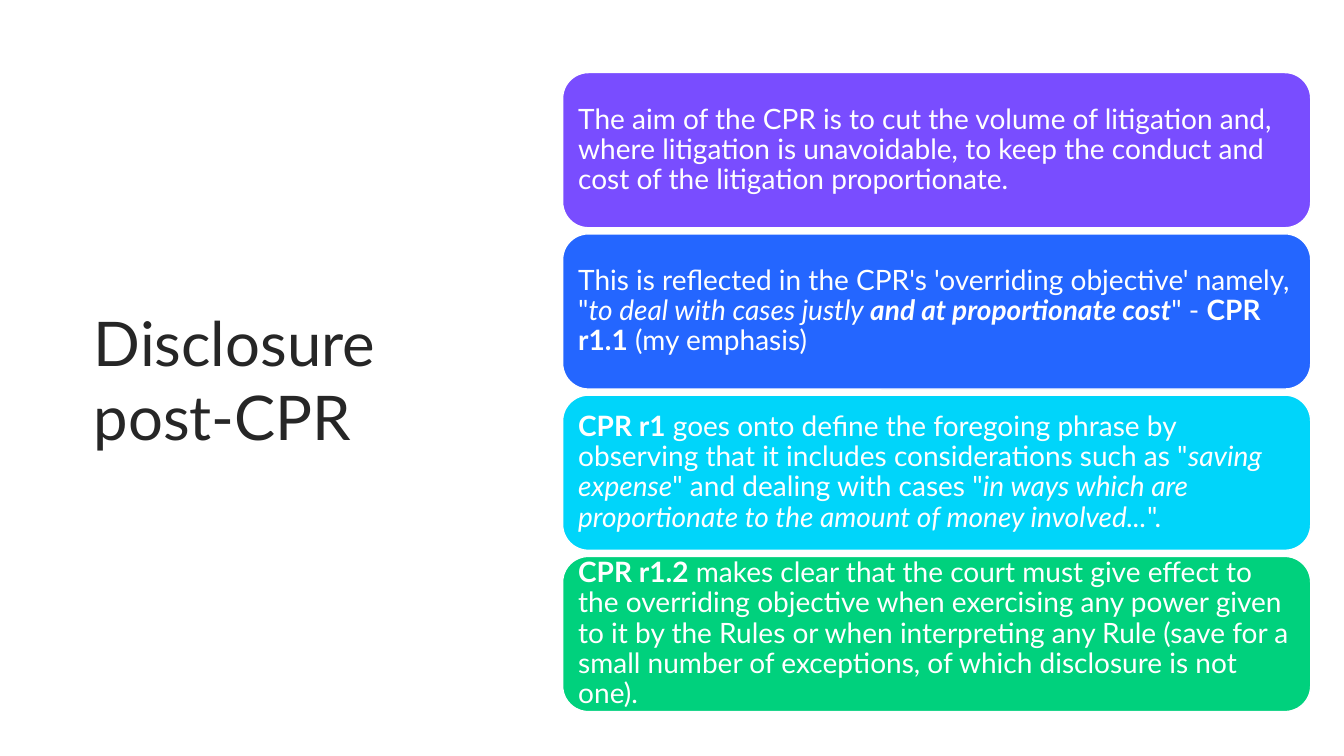
from dataclasses import dataclass

import pptx
import pptx.dml.color
import pptx.enum.shapes
import pptx.enum.text
import pptx.util

EMU_PER_PX = 9144


@dataclass(frozen=True)
class Theme:
    font: str = "Lato"
    title_size: int = 44
    card_size: int = 20
    ink: str = "262626"
    white: str = "FFFFFF"
    violet: str = "794DFF"
    blue: str = "2466FF"
    cyan: str = "00D5FA"
    green: str = "00D17D"


@dataclass(frozen=True)
class Span:
    text: str
    bold: bool = False
    italic: bool = False


@dataclass(frozen=True)
class Card:
    fill: str
    spans: tuple[Span, ...]


THEME = Theme()
CARD_LEFT, CARD_TOP = 558, 72
CARD_WIDTH, CARD_HEIGHT, CARD_GAP = 742, 154, 6
CARD_INSET = 8

CARDS = (
    Card(THEME.violet, (
        Span("The aim of the CPR is to cut the volume of litigation and, where litigation is "
             "unavoidable, to keep the conduct and cost of the litigation proportionate. "),
    )),
    Card(THEME.blue, (
        Span("This is reflected in the CPR's 'overriding objective' namely, \""),
        Span("to deal with cases justly ", italic=True),
        Span("and at proportionate cost", bold=True, italic=True),
        Span("\" - "),
        Span("CPR r1.1", bold=True),
        Span(" (my emphasis)"),
    )),
    Card(THEME.cyan, (
        Span("CPR r1", bold=True),
        Span(" goes onto define the foregoing phrase by observing that it "
             "includes considerations such as \""),
        Span("saving expense", italic=True),
        Span("\" and dealing with cases \""),
        Span("in ways which are proportionate to the amount of money involved...", italic=True),
        Span("\"."),
    )),
    Card(THEME.green, (
        Span("CPR r1.2", bold=True),
        Span(" makes clear that the court must give effect to the overriding objective when "
             "exercising any power given to it by the Rules or when interpreting any Rule "
             "(save for a small number of exceptions, of which disclosure is not one)."),
    )),
)


def px(length: int) -> pptx.util.Emu:
    return pptx.util.Emu(length * EMU_PER_PX)


def rgb(value: str) -> pptx.dml.color.RGBColor:
    return pptx.dml.color.RGBColor.from_string(value)


def format_para(para, size: int, color: str, spacing: float) -> None:
    para.alignment = pptx.enum.text.PP_ALIGN.LEFT
    para.line_spacing = spacing
    para.font.name = THEME.font
    para.font.size = pptx.util.Pt(size)
    para.font.color.rgb = rgb(color)


def draw_title(page, text: str) -> None:
    title = page.shapes.title
    title.left, title.top, title.width, title.height = px(83), px(94), px(377), px(564)
    frame = title.text_frame
    frame.text = text
    frame.word_wrap = True
    frame.auto_size = pptx.enum.text.MSO_AUTO_SIZE.NONE
    frame.vertical_anchor = pptx.enum.text.MSO_ANCHOR.MIDDLE
    format_para(frame.paragraphs[0], THEME.title_size, THEME.ink, 1.0)


def draw_card(page, card: Card, top: int) -> None:
    box = page.shapes.add_shape(
        pptx.enum.shapes.MSO_SHAPE.ROUNDED_RECTANGLE,
        px(CARD_LEFT), px(top), px(CARD_WIDTH), px(CARD_HEIGHT))
    box.shadow.inherit = False
    box.fill.solid()
    box.fill.fore_color.rgb = rgb(card.fill)
    box.line.color.rgb = rgb(THEME.white)
    box.line.width = pptx.util.Pt(1)
    frame = box.text_frame
    frame.word_wrap = True
    frame.vertical_anchor = pptx.enum.text.MSO_ANCHOR.MIDDLE
    frame.margin_left = frame.margin_right = px(CARD_INSET)
    frame.margin_top = frame.margin_bottom = px(CARD_INSET)
    para = frame.paragraphs[0]
    format_para(para, THEME.card_size, THEME.white, 0.9)
    for span in card.spans:
        run = para.add_run()
        run.text = span.text
        run.font.bold = span.bold
        run.font.italic = span.italic


def main() -> None:
    deck = pptx.Presentation()
    deck.slide_width, deck.slide_height = px(1333), px(750)
    page = deck.slides.add_slide(deck.slide_layouts.get_by_name("Title Only"))
    page.background.fill.solid()
    page.background.fill.fore_color.rgb = rgb(THEME.white)
    draw_title(page, "Disclosure post-CPR")
    for index, card in enumerate(CARDS):
        draw_card(page, card, CARD_TOP + index * (CARD_HEIGHT + CARD_GAP))
    deck.save("out.pptx")


if __name__ == "__main__":
    main()
